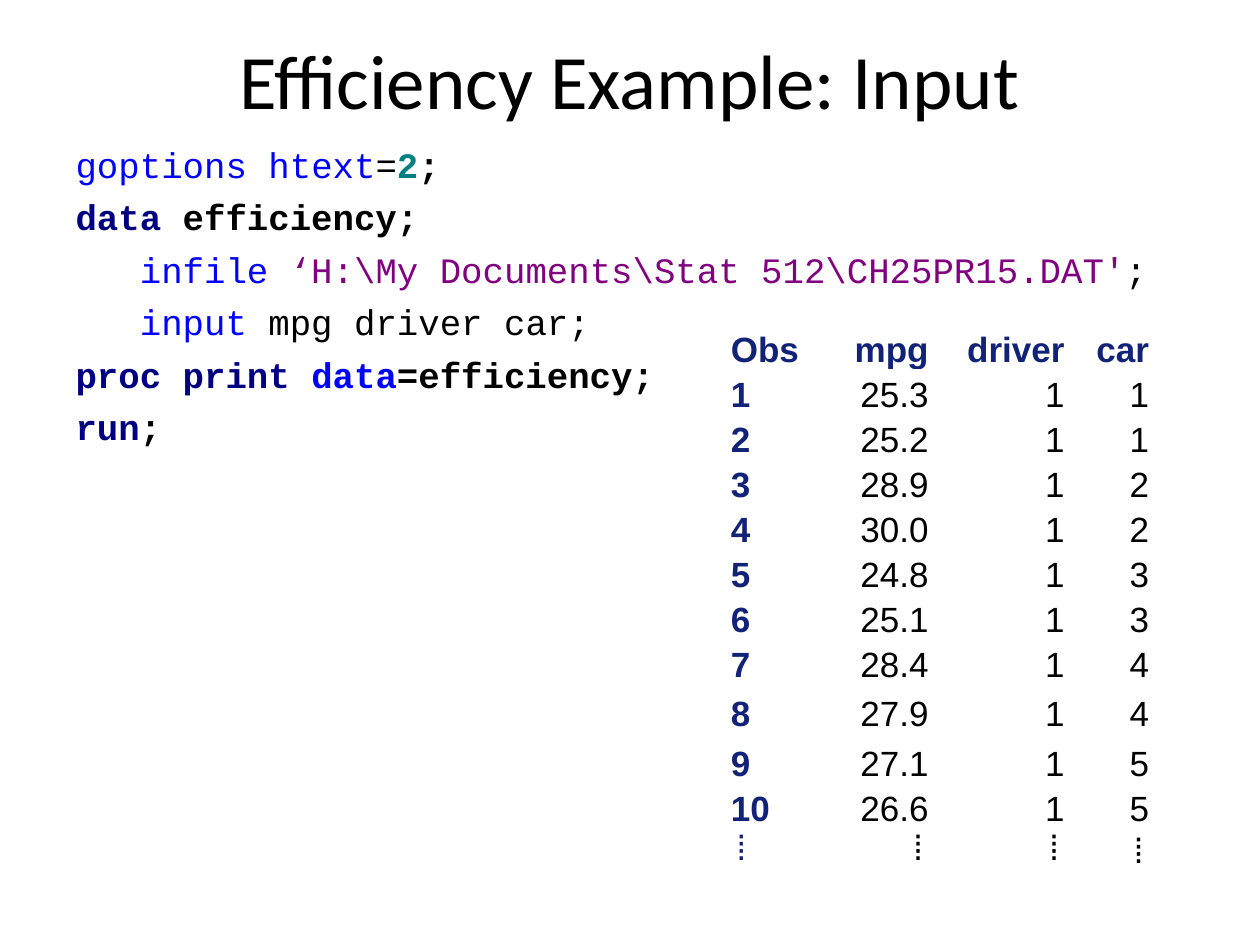
"""Build the efficiency example slide with its input code and data listing."""
from lxml.etree import SubElement
from pptx import Presentation
from pptx.dml.color import RGBColor
from pptx.enum.text import MSO_ANCHOR, MSO_AUTO_SIZE, PP_ALIGN
from pptx.oxml.ns import qn
from pptx.util import Inches, Pt

BLACK = RGBColor(0x00, 0x00, 0x00)
BLUE = RGBColor(0x00, 0x00, 0xFF)
NAVY = RGBColor(0x00, 0x00, 0x80)
TEAL = RGBColor(0x00, 0x80, 0x80)
PURPLE = RGBColor(0x80, 0x00, 0x80)
HEADING = RGBColor(0x11, 0x22, 0x77)

TITLE = "Efficiency Example: Input"
CODE = [
    [("goptions htext", BLUE, False), ("=", BLACK, False), ("2", TEAL, True), (";", BLACK, True)],
    [("data", NAVY, True), (" efficiency;", BLACK, True)],
    [("   infile ", BLUE, False),
     ("‘H:\\My Documents\\Stat 512\\CH25PR15.DAT'", PURPLE, False), (";", BLACK, False)],
    [("   input", BLUE, False), (" mpg driver car;", BLACK, False)],
    [("proc print ", NAVY, True), ("data", BLUE, True), ("=efficiency;", BLACK, True)],
    [("run", NAVY, True), (";", BLACK, True)],
]
HEADERS = ("Obs", "mpg", "driver", "car")
RECORDS = [
    ("1", "25.3", "1", "1"),
    ("2", "25.2", "1", "1"),
    ("3", "28.9", "1", "2"),
    ("4", "30.0", "1", "2"),
    ("5", "24.8", "1", "3"),
    ("6", "25.1", "1", "3"),
    ("7", "28.4", "1", "4"),
    ("8", "27.9", "1", "4"),
    ("9", "27.1", "1", "5"),
    ("10", "26.6", "1", "5"),
]
ELLIPSIS = "⁞"
ROWS = [HEADERS, *RECORDS, (ELLIPSIS,) * len(HEADERS)]
COLUMN_WIDTHS = (0.75, 0.92, 1.08, 0.67)
ROW_HEIGHT = 0.1
TALL_ROW, TALL_HEIGHT = 8, 0.43


def place(shape, left, top, width, height):
    shape.left, shape.top = Inches(left), Inches(top)
    shape.width, shape.height = Inches(width), Inches(height)


def style(span, font, size, color, bold=False):
    span.font.name = font
    span.font.size = Pt(size)
    span.font.color.rgb = color
    span.font.bold = bold


def add_title(page):
    title = page.shapes.title
    place(title, 0.5, 0, 9, 1.25)
    title.text_frame.text = TITLE
    title.text_frame.vertical_anchor = MSO_ANCHOR.MIDDLE
    para = title.text_frame.paragraphs[0]
    para.alignment = PP_ALIGN.CENTER
    style(para.runs[0], "Calibri", 44, BLACK)


def add_code(page):
    body = page.placeholders[1]
    place(body, 0.5, 1.08, 9.17, 2.67)
    frame = body.text_frame
    frame.auto_size = MSO_AUTO_SIZE.NONE
    for index, line in enumerate(CODE):
        para = frame.add_paragraph() if index else frame.paragraphs[0]
        para.space_before = Pt(5.5)
        properties = para._p.get_or_add_pPr()
        properties.set("marL", str(Inches(0.38)))
        properties.set("indent", str(-Inches(0.38)))
        SubElement(properties, qn("a:buNone"))
        for text, color, bold in line:
            span = para.add_run()
            span.text = text
            style(span, "Courier New", 20.4, color, bold)


def fill_cell(cell, text, row, column):
    cell.fill.background()
    cell.vertical_anchor = MSO_ANCHOR.MIDDLE
    cell.margin_left = cell.margin_right = Inches(0.05)
    cell.margin_top = cell.margin_bottom = 0
    cell.text_frame.text = text
    para = cell.text_frame.paragraphs[0]
    para.alignment = PP_ALIGN.RIGHT if column else PP_ALIGN.LEFT
    last_column = column == len(HEADERS) - 1
    if text != ELLIPSIS or last_column:
        para.line_spacing = 1.15
        para.space_before = para.space_after = Pt(5)
    heading = row == 0 or column == 0
    font = "Courier New" if text == ELLIPSIS else "Arial"
    bold = heading and text != ELLIPSIS
    style(para.runs[0], font, 20, HEADING if heading else BLACK, bold)


def add_listing(page):
    frame = page.shapes.add_table(
        len(ROWS), len(HEADERS), Inches(5.75), Inches(2.58), Inches(3.42), Inches(4.65))
    table = frame.table
    table.first_row = table.horz_banding = False
    for column, width in zip(table.columns, COLUMN_WIDTHS):
        column.width = Inches(width)
    for row, values in enumerate(ROWS):
        table.rows[row].height = Inches(TALL_HEIGHT if row == TALL_ROW else ROW_HEIGHT)
        for column, text in enumerate(values):
            fill_cell(table.cell(row, column), text, row, column)


def main():
    deck = Presentation()
    deck.slide_width, deck.slide_height = Inches(10), Inches(7.5)
    page = deck.slides.add_slide(deck.slide_layouts[1])
    add_title(page)
    add_code(page)
    add_listing(page)
    deck.save("out.pptx")


if __name__ == "__main__":
    main()
